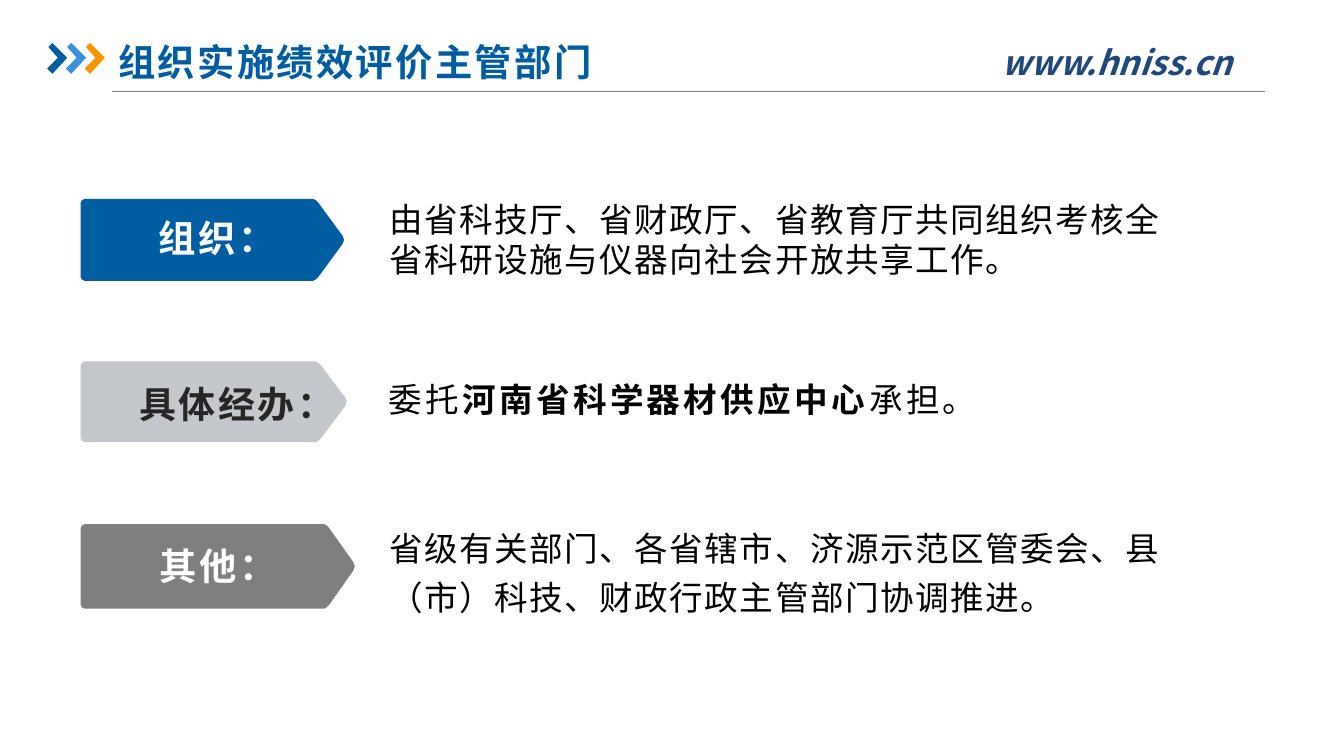
"""Build the slide on the departments in charge of performance evaluation."""
from lxml.etree import SubElement
from pptx import Presentation
from pptx.dml.color import RGBColor
from pptx.enum.text import MSO_ANCHOR, PP_ALIGN
from pptx.oxml.ns import qn
from pptx.util import Inches, Pt

BLUE = RGBColor(0x00, 0x5D, 0xA2)
SKY = RGBColor(0x39, 0x92, 0xDB)
ORANGE = RGBColor(0xF7, 0x96, 0x00)
NAVY = RGBColor(0x1F, 0x49, 0x7D)
SILVER = RGBColor(0xC4, 0xC7, 0xCB)
GRAY = RGBColor(0x7F, 0x7F, 0x7F)
RULE_GRAY = RGBColor(0x80, 0x80, 0x80)
CHARCOAL = RGBColor(0x26, 0x26, 0x26)
BLACK = RGBColor(0x00, 0x00, 0x00)
WHITE = RGBColor(0xFF, 0xFF, 0xFF)
CJK = "Noto Sans CJK SC"

prs = Presentation()
prs.slide_width = Inches(10)
prs.slide_height = Inches(10 * 9 / 16)
slide = prs.slides.add_slide(prs.slide_layouts[6])


def add_outline(left, top, points, color):
    corners = [(Inches(left + x), Inches(top + y)) for x, y in points]
    builder = slide.shapes.build_freeform(*corners[0])
    builder.add_line_segments(corners[1:], close=True)
    outline = builder.convert_to_shape()
    outline.shadow.inherit = False
    outline.fill.solid()
    outline.fill.fore_color.rgb = color
    outline.line.fill.background()


def add_text(box, parts, size, color, bold=False, spacing=0, font=CJK, align=PP_ALIGN.LEFT):
    frame = slide.shapes.add_textbox(*[Inches(length) for length in box]).text_frame
    frame.word_wrap = True
    paragraph = frame.paragraphs[0]
    paragraph.alignment = align
    for index, part in enumerate(parts):
        run = paragraph.add_run()
        run.text = part
        if index % 2:
            run.font.bold = True
    paragraph.font.size = Pt(size)
    paragraph.font.bold = bold
    paragraph.font.color.rgb = color
    paragraph.font.name = font
    defaults = paragraph._p.pPr.find(qn("a:defRPr"))
    defaults.set("spc", str(round(spacing * 100)))
    SubElement(defaults, qn("a:ea")).set("typeface", CJK)
    return frame


rule = slide.shapes.add_connector(1, Inches(0.83), Inches(0.68), Inches(9.41), Inches(0.68))
rule.line.color.rgb = RULE_GRAY
rule.line.width = Pt(0.75)
SubElement(rule._element.spPr, qn("a:effectLst"))

chevron = [(0.01, 0.03), (0.04, 0), (0.15, 0.11), (0.04, 0.23), (0, 0.19), (0.08, 0.11)]
for index, color in enumerate([BLUE, SKY, ORANGE]):
    add_outline(0.35 + 0.14 * index, 0.32, chevron, color)

website = add_text((7.13, 0.26, 2.36, 0.4), ["www.hniss.cn"], 18, NAVY, True, align=PP_ALIGN.CENTER)
website.paragraphs[0].font.italic = True

title = add_text((0.83, 0.21, 9, 0.5), ["组织实施绩效评价主管部门"], 20, BLUE, True, 1.2)
title.vertical_anchor = MSO_ANCHOR.MIDDLE
title.margin_left = title.margin_right = Inches(0.05)
title.margin_top = title.margin_bottom = Inches(0.02)

duties = [
    ((1.48, 1.96, 0.61), BLUE, "组织：", (0.91, 1.55, 1.41, 0.56), 20, WHITE, 1.5,
     ["由省科技厅、省财政厅、省教育厅共同组织考核全省科研设施与仪器向社会开放共享工作。"],
     (2.8, 1.43), 0.8, 1),
    ((2.69, 1.98, 0.6), SILVER, "具体经办：", (0.83, 2.79, 1.59, 0.56), 19.8, CHARCOAL, 1.4,
     ["委托", "河南省科学器材供应中心", "承担。"],
     (2.79, 2.77), 1.8, 1),
    ((3.9, 2.04, 0.63), GRAY, "其他：", (0.83, 3.99, 1.59, 0.56), 20, WHITE, 1.5,
     ["省级有关部门、各省辖市、济源示范区管委会、县（市）科技、财政行政主管部门协调推进。"],
     (2.8, 3.82), 0.8, 1.2),
]
for (arrow, fill, label, label_box, label_size, label_color, label_spacing,
     duty, duty_corner, duty_spacing, line_spacing) in duties:
    top, width, height = arrow
    upper = [(0, 0.03), (0.01, 0.01), (0.03, 0), (width - 0.23, 0), (width - 0.21, 0.01),
             (width - 0.19, 0.03), (width - 0.01, height / 2 - 0.03), (width, height / 2)]
    lower = [(x, height - y) for x, y in reversed(upper[:-1])]
    add_outline(0.6, top, upper + lower, fill)
    description = add_text((*duty_corner, 6.09, 0.75), duty, 18, BLACK, spacing=duty_spacing)
    description.paragraphs[0].space_after = Pt(8)
    description.paragraphs[0].line_spacing = line_spacing
    add_text(label_box, [label], label_size, label_color, True, label_spacing, "Arial", PP_ALIGN.CENTER)

prs.save("out.pptx")
